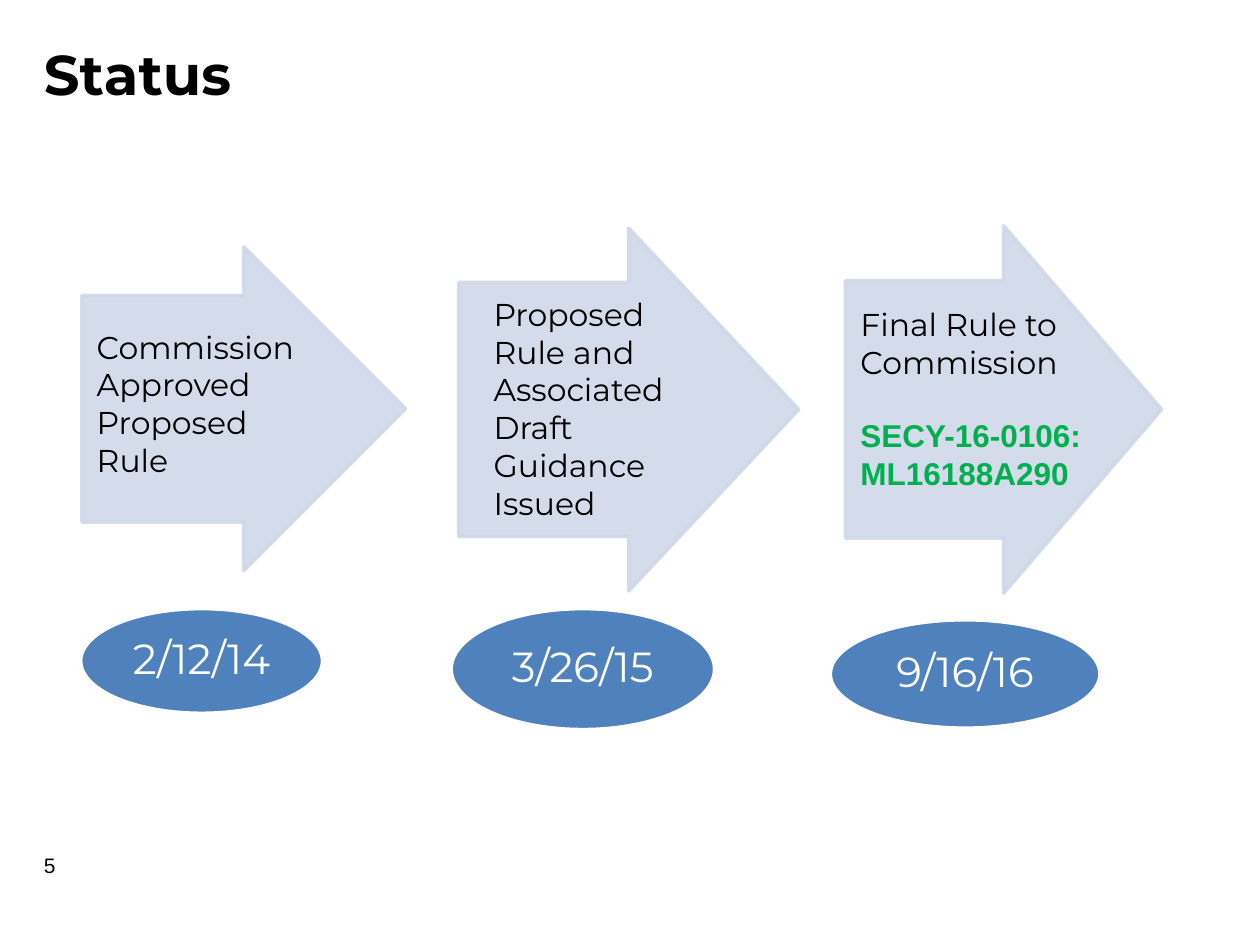
from pptx import Presentation
from pptx.dml.color import RGBColor
from pptx.enum import shapes, text
from pptx.oxml.ns import qn
from pptx.util import Pt
from lxml import etree

THEME = {
    "arrow": "D0D8E8", "date": "4F81BD", "white": "FFFFFF",
    "black": "000000", "green": "00B050", "alpha": "90000",
    "head": "Montserrat", "body": "Arial",
    "title": 32, "big": 24, "text": 18, "small": 12, "edge": 2,
}

STEPS = [
    {"date": "2/12/14", "arrow": (46.8, 141.1, 185, 185),
     "oval": (46.1, 347.8, 138.2, 59.8)},
    {"date": "3/26/15", "arrow": (262.1, 130.3, 194.4, 207.4),
     "oval": (257.8, 347.8, 150.5, 69.1)},
    {"date": "9/16/16", "arrow": (483.1, 128.9, 180.7, 210.2),
     "oval": (474.5, 354.2, 154.1, 61.9)},
]

PLAIN = {"name": THEME["head"], "size": THEME["text"], "color": THEME["black"]}
TITLE = {**PLAIN, "size": THEME["title"], "bold": True}
DATE = {**PLAIN, "size": THEME["big"], "color": THEME["white"]}
CODE = {"name": THEME["body"], "size": THEME["text"],
        "color": THEME["green"], "bold": True}
PAGE = {"name": THEME["body"], "size": THEME["small"], "color": THEME["black"]}

MID = text.MSO_ANCHOR.MIDDLE
TOP = text.MSO_ANCHOR.TOP
LABELS = [
    ("Status", (18, 2.9, 684, 77.8), TITLE, MID),
    ("Commission Approved Proposed Rule", (48.2, 183.6, 138.2, 94.3), PLAIN, TOP),
    ("Proposed Rule and Associated Draft Guidance Issued",
     (275, 164.9, 144, 138.2), PLAIN, TOP),
    ("Final Rule to Commission", (484.6, 170.6, 144, 51.1), PLAIN, TOP),
    ("SECY-16-0106: ML16188A290", (484.6, 234, 192.2, 51.1), CODE, TOP),
    ("5", (18, 480.2, 167.8, 28.8), PAGE, MID),
]


def place(box):
    return [Pt(n) for n in box]


def style(para, form):
    for key, val in form.items():
        if key == "color":
            para.font.color.rgb = RGBColor.from_string(val)
        else:
            setattr(para.font, key, Pt(val) if key == "size" else val)


def paint(shape, fill, edge):
    shape.shadow.inherit = False
    shape.fill.solid()
    shape.fill.fore_color.rgb = RGBColor.from_string(fill)
    shape.line.color.rgb = RGBColor.from_string(edge)
    shape.line.width = Pt(THEME["edge"])


def fade(shape):
    for node in shape._element.spPr.iter(qn("a:srgbClr")):
        etree.SubElement(node, qn("a:alpha"), val=THEME["alpha"])


def draw_arrow(slide, box):
    arrow = slide.shapes.add_shape(shapes.MSO_SHAPE.RIGHT_ARROW, *place(box))
    arrow.adjustments[0] = 0.7
    arrow.adjustments[1] = 0.5
    paint(arrow, THEME["arrow"], THEME["arrow"])
    fade(arrow)


def draw_date(slide, words, box):
    oval = slide.shapes.add_shape(shapes.MSO_SHAPE.OVAL, *place(box))
    paint(oval, THEME["date"], THEME["white"])
    frame = oval.text_frame
    for side in ("left", "top", "right", "bottom"):
        setattr(frame, f"margin_{side}", Pt(1.44))
    frame.vertical_anchor = MID
    frame.text = words
    para = frame.paragraphs[0]
    para.alignment = text.PP_ALIGN.CENTER
    para.line_spacing = 0.9
    style(para, DATE)


def draw_label(slide, words, box, form, anchor):
    frame = slide.shapes.add_textbox(*place(box)).text_frame
    frame.word_wrap = True
    frame.vertical_anchor = anchor
    frame.text = words
    style(frame.paragraphs[0], form)


def main():
    deck = Presentation()
    deck.slide_width, deck.slide_height = Pt(720), Pt(540)
    slide = deck.slides.add_slide(deck.slide_layouts[6])
    for step in STEPS:
        draw_arrow(slide, step["arrow"])
        draw_date(slide, step["date"], step["oval"])
    for label in LABELS:
        draw_label(slide, *label)
    deck.save("out.pptx")


if __name__ == "__main__":
    main()
